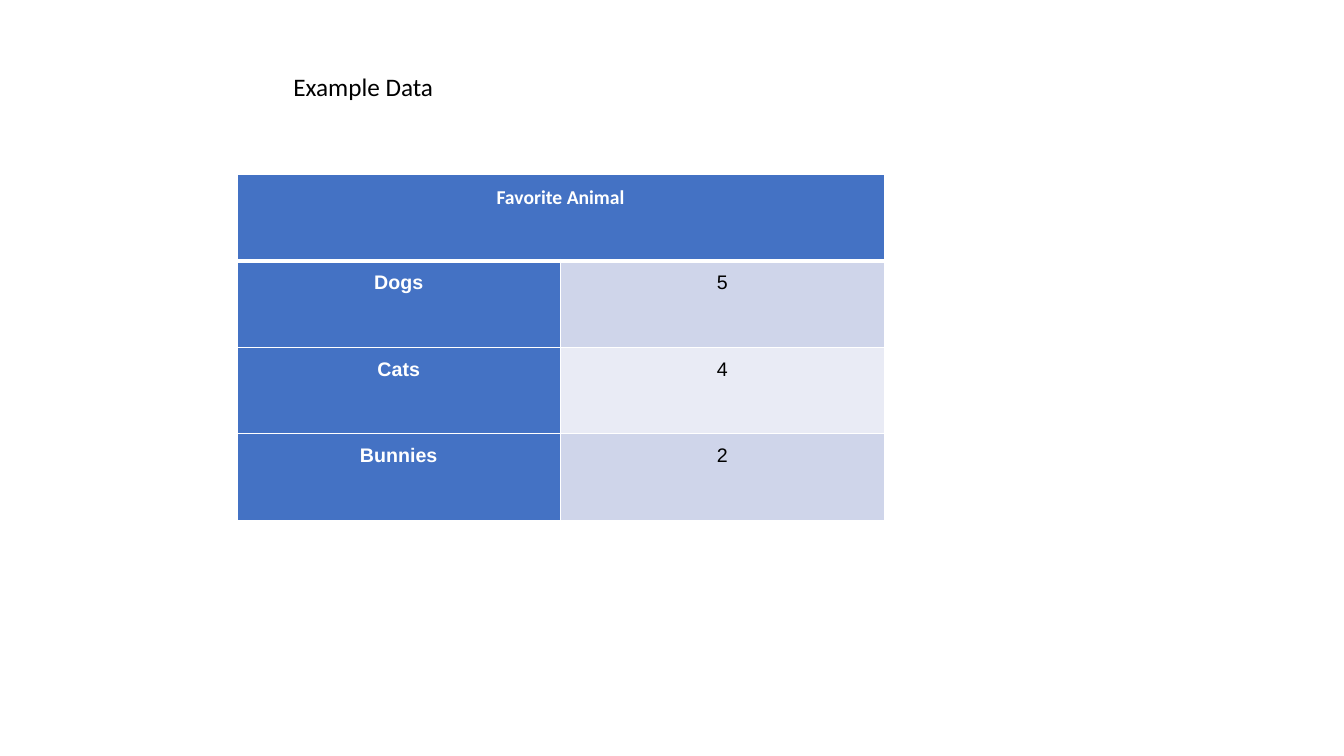
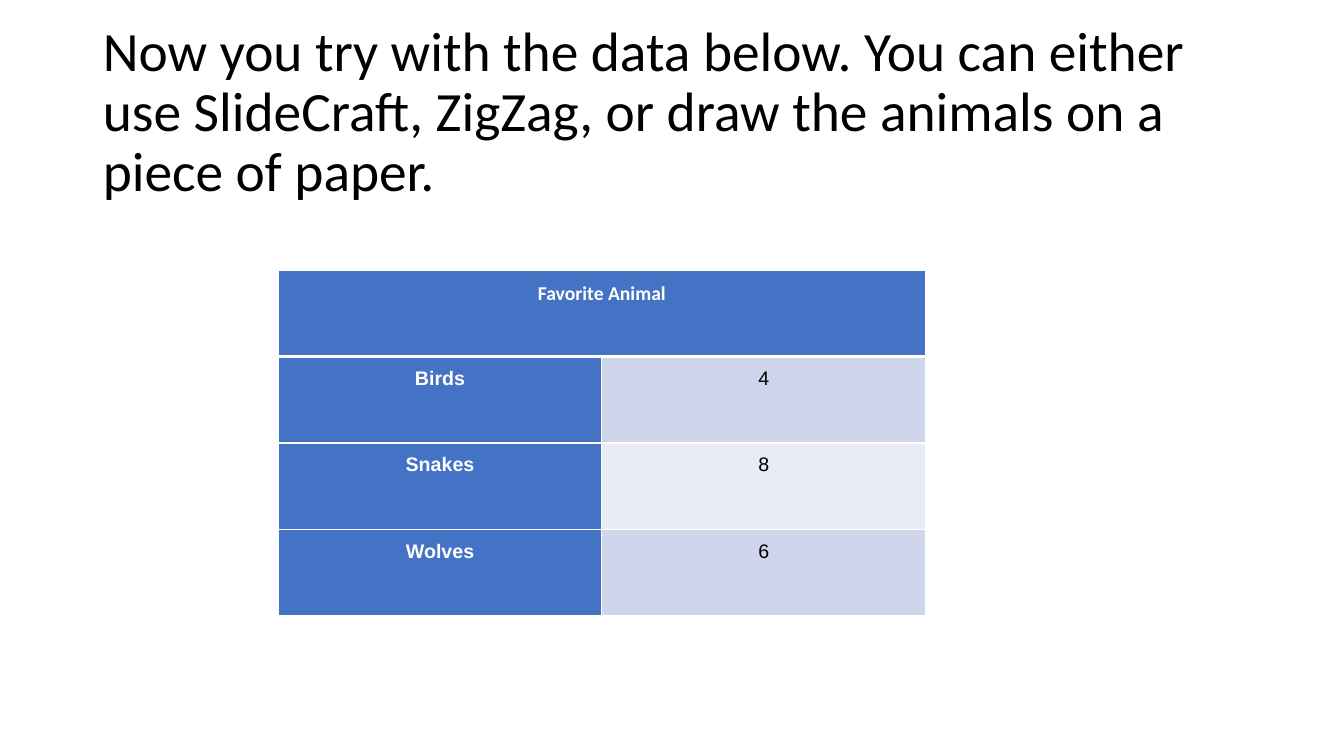
from lxml.etree import SubElement
from pptx import Presentation
from pptx.dml.color import RGBColor
from pptx.enum.text import MSO_ANCHOR, MSO_AUTO_SIZE, PP_ALIGN
from pptx.oxml.ns import qn
from pptx.util import Inches, Pt


class Deck:
    """Builds slides with a title and a favorite animal table in one style."""

    COLORS = {"text": "000000", "white": "FFFFFF", "accent": "4472C4",
              "band_dark": "CFD5EA", "band_light": "E9EBF5"}
    TITLE = {"word_wrap": True, "auto_size": MSO_AUTO_SIZE.NONE,
             "vertical_anchor": MSO_ANCHOR.MIDDLE}
    CELL = {"margin_left": Inches(0.07), "margin_right": Inches(0.07),
            "margin_top": 0, "margin_bottom": 0, "vertical_anchor": MSO_ANCHOR.TOP}
    CELL_PARAGRAPH = {"alignment": PP_ALIGN.CENTER, "line_spacing": 1.5,
                      "space_before": Pt(7.5)}
    TABLE_SIZE = (6.42, 3.43)

    def __init__(self):
        self.prs = Presentation()
        self.prs.slide_width, self.prs.slide_height = Inches(13.33), Inches(7.5)
        self.s = None

    def color(self, name):
        return RGBColor.from_string(self.COLORS[name])

    @staticmethod
    def apply(target, values):
        for name, value in values.items():
            setattr(target, name, value)

    def add_text(self, p, text, color, **font):
        r = p.add_run()
        r.text = text
        self.apply(r.font, font)
        r.font.color.rgb = self.color(color)

    def slide(self, title, box, size, spacing):
        self.s = self.prs.slides.add_slide(self.prs.slide_layouts[5])
        sp = self.s.shapes.title
        self.apply(sp, dict(zip(("left", "top", "width", "height"), map(Inches, box))))
        tf = sp.text_frame
        self.apply(tf, self.TITLE)
        p = tf.paragraphs[0]
        self.apply(p, {"alignment": PP_ALIGN.LEFT, "line_spacing": spacing})
        self.add_text(p, title, "text", name="Calibri", size=Pt(size), bold=False)

    def border(self, cell, widths):
        tc_pr = cell._tc.get_or_add_tcPr()
        for side, width in zip("LRTB", widths):
            ln = SubElement(tc_pr, qn(f"a:ln{side}"), w=str(Pt(width)))
            fill = SubElement(ln, qn("a:solidFill"))
            SubElement(fill, qn("a:srgbClr"), val=self.COLORS["white"])

    def cell(self, cell, text, fill, color, widths, **font):
        self.apply(cell, self.CELL)
        self.border(cell, widths)
        cell.fill.solid()
        cell.fill.fore_color.rgb = self.color(fill)
        if text:
            p = cell.text_frame.paragraphs[0]
            self.apply(p, self.CELL_PARAGRAPH)
            self.add_text(p, text, color, size=Pt(14), **font)

    def table(self, left, top, header, data):
        width, height = self.TABLE_SIZE
        table = self.s.shapes.add_table(len(data) + 1, 2, Inches(left), Inches(top),
                                        Inches(width), Inches(height)).table
        table.cell(0, 0).merge(table.cell(0, 1))
        for col, text in enumerate((header, "")):
            self.cell(table.cell(0, col), text, "accent", "white", (1, 1, 1, 3),
                      name="Calibri", bold=True)
        for row, (animal, count) in enumerate(data, 1):
            widths = (1, 1, 3 if row == 1 else 1, 1)
            band = "band_dark" if row % 2 else "band_light"
            self.cell(table.cell(row, 0), animal, "accent", "white", widths,
                      name="Arial", bold=True)
            self.cell(table.cell(row, 1), str(count), band, "text", widths,
                      name="Arial", bold=False)


def main():
    deck = Deck()
    header = "Favorite Animal"

    deck.slide("Example Data", (2.81, 0.66, 6.31, 0.4), 18, 1.0)
    deck.table(2.35, 1.73, header, [("Dogs", 5), ("Cats", 4), ("Bunnies", 2)])

    deck.slide("Now you try with the data below. You can either use SlideCraft, "
               "ZigZag, or draw the animals on a piece of paper.",
               (0.92, 0.4, 11.5, 1.45), 39.6, 0.9)
    deck.table(2.76, 2.68, header, [("Birds", 4), ("Snakes", 8), ("Wolves", 6)])

    deck.prs.save("out.pptx")


if __name__ == "__main__":
    main()
